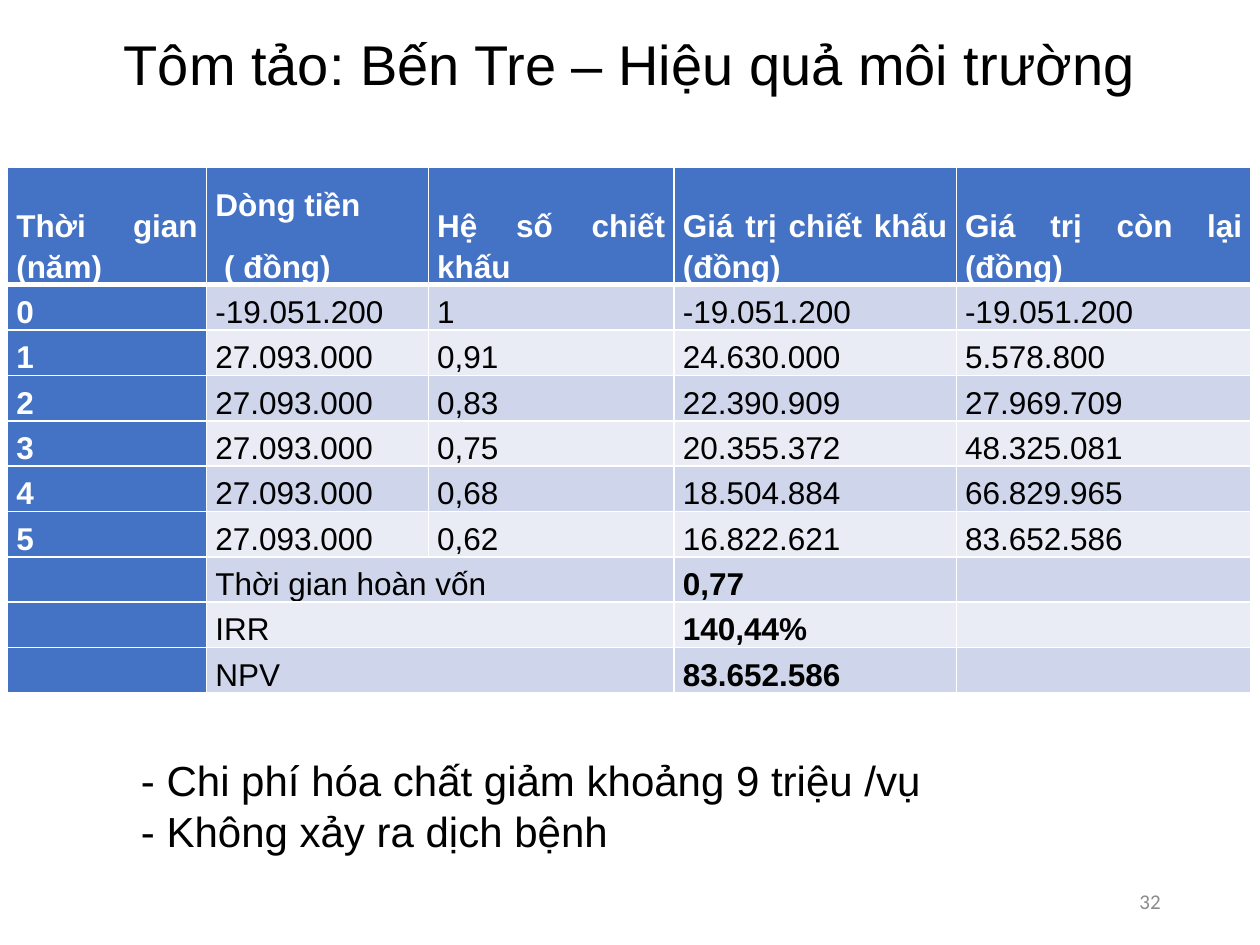
from lxml.etree import SubElement
from pptx import Presentation
from pptx.dml.color import RGBColor
from pptx.enum.text import MSO_ANCHOR, MSO_AUTO_SIZE, PP_ALIGN
from pptx.oxml.ns import qn
from pptx.util import Inches, Pt

COLORS = {
    "black": "000000",
    "white": "FFFFFF",
    "header": "4472C4",
    "band_dark": "CFD5EA",
    "band_light": "E9EBF5",
    "number": "8C8C8C",
}
COLUMN_WIDTHS = [1.58, 1.76, 1.95, 2.24, 2.34]
HEADER_HEIGHT, ROW_HEIGHT = 0.93, 0.36
ROWS = [
    ["Thời gian (năm)", "Dòng tiền\n ( đồng)", "Hệ số chiết khấu",
     "Giá trị chiết khấu (đồng)", "Giá trị còn lại (đồng)"],
    ["0", "-19.051.200", "1", "-19.051.200", "-19.051.200"],
    ["1", "27.093.000", "0,91", "24.630.000", "5.578.800"],
    ["2", "27.093.000", "0,83", "22.390.909", "27.969.709"],
    ["3", "27.093.000", "0,75", "20.355.372", "48.325.081"],
    ["4", "27.093.000", "0,68", "18.504.884", "66.829.965"],
    ["5", "27.093.000", "0,62", "16.822.621", "83.652.586"],
    ["", "Thời gian hoàn vốn", "", "0,77", ""],
    ["", "IRR", "", "140,44%", ""],
    ["", "NPV", "", "83.652.586", ""],
]
FIRST_SUMMARY_ROW = 7


def set_font(para, size, color, bold=False, name="Arial"):
    para.font.name = name
    para.font.size = Pt(size)
    para.font.bold = bold
    para.font.color.rgb = RGBColor.from_string(COLORS[color])


def add_title(page, text):
    title = page.shapes.title
    title.left, title.top = Inches(0.69), Inches(0.13)
    title.width, title.height = Inches(8.62), Inches(0.81)
    frame = title.text_frame
    frame.text = text
    frame.auto_size = MSO_AUTO_SIZE.NONE
    frame.vertical_anchor = MSO_ANCHOR.MIDDLE
    para = frame.paragraphs[0]
    para.alignment = PP_ALIGN.CENTER
    para.line_spacing = 0.9
    set_font(para, 32, "black")


def add_text(page, box, lines, size, color, name="Arial", align=PP_ALIGN.LEFT,
             anchor=MSO_ANCHOR.TOP, wrap=True):
    frame = page.shapes.add_textbox(*map(Inches, box)).text_frame
    frame.word_wrap = wrap
    frame.vertical_anchor = anchor
    frame.text = "\n".join(lines)
    for para in frame.paragraphs:
        para.alignment = align
        set_font(para, size, color, name=name)


def set_borders(cell, widths):
    properties = cell._tc.get_or_add_tcPr()
    for side, width in widths.items():
        line = SubElement(properties, qn(f"a:ln{side}"), w=str(Pt(width)))
        fill = SubElement(line, qn("a:solidFill"))
        SubElement(fill, qn("a:srgbClr"), val=COLORS["white"])


def format_cell(cell, text, row, column):
    is_header = row == 0 or column == 0
    is_result = row >= FIRST_SUMMARY_ROW and column == 3

    # Borders come before the fill in the cell properties
    set_borders(cell, {"L": 1, "R": 1, "T": 3 if row == 1 else 1,
                       "B": 3 if row == 0 else 1})
    band = "band_dark" if row % 2 else "band_light"
    cell.fill.solid()
    cell.fill.fore_color.rgb = RGBColor.from_string(
        COLORS["header" if is_header else band])

    cell.margin_left = cell.margin_right = Inches(0.07)
    cell.margin_top = cell.margin_bottom = 0
    cell.vertical_anchor = MSO_ANCHOR.BOTTOM
    cell.text = text
    for para in cell.text_frame.paragraphs:
        para.alignment = PP_ALIGN.JUSTIFY
        para.line_spacing = 1.15
        para.space_before = para.space_after = Pt(6)
        set_font(para, 18, "white" if is_header else "black",
                 bold=is_header or is_result)


def add_cash_flow_table(page):
    height = HEADER_HEIGHT + ROW_HEIGHT * (len(ROWS) - 1)
    table = page.shapes.add_table(
        len(ROWS), len(COLUMN_WIDTHS), Inches(0.06), Inches(1.33),
        Inches(sum(COLUMN_WIDTHS)), Inches(height)).table
    table.first_col = True
    for column, width in zip(table.columns, COLUMN_WIDTHS):
        column.width = Inches(width)
    for index, values in enumerate(ROWS):
        table.rows[index].height = Inches(ROW_HEIGHT if index else HEADER_HEIGHT)
        for column, text in enumerate(values):
            format_cell(table.cell(index, column), text, index, column)
        if index >= FIRST_SUMMARY_ROW:
            table.cell(index, 1).merge(table.cell(index, 2))


def main():
    deck = Presentation()
    deck.slide_width, deck.slide_height = Inches(10), Inches(7.5)
    page = deck.slides.add_slide(deck.slide_layouts[5])

    add_title(page, "Tôm tảo: Bến Tre – Hiệu quả môi trường")
    add_cash_flow_table(page)

    # Conclusions and page number
    add_text(page, (1.02, 5.94, 6.55, 0.91),
             ["- Chi phí hóa chất giảm khoảng 9 triệu /vụ",
              "- Không xảy ra dịch bệnh"], 24, "black", wrap=False)
    add_text(page, (7.06, 6.95, 2.25, 0.4), ["32"], 12, "number", name="Calibri",
             align=PP_ALIGN.RIGHT, anchor=MSO_ANCHOR.MIDDLE)

    deck.save("out.pptx")


if __name__ == "__main__":
    main()
